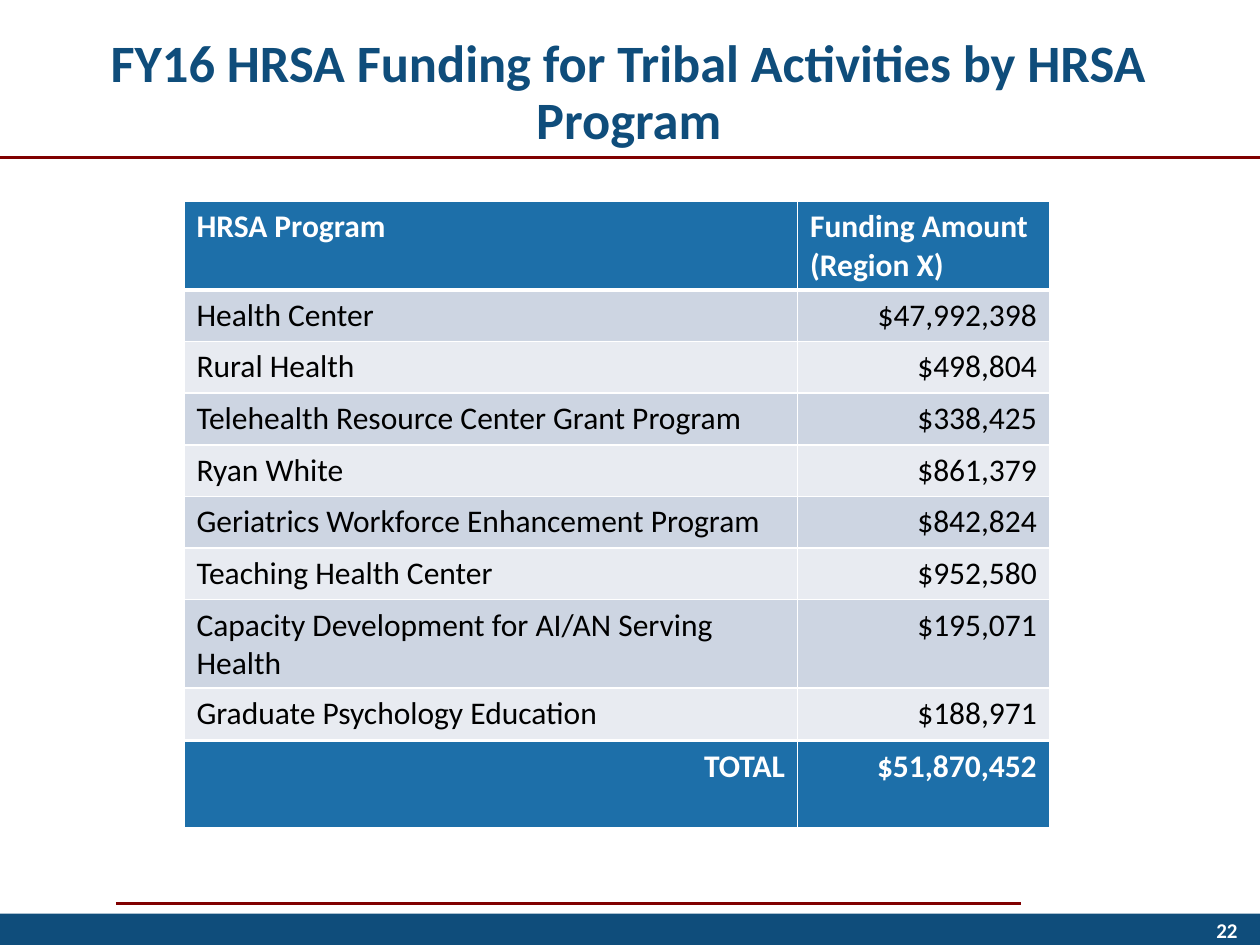
from lxml import etree
from pptx import Presentation
from pptx.dml.color import RGBColor
from pptx.enum.shapes import MSO_CONNECTOR, MSO_SHAPE
from pptx.enum.text import MSO_ANCHOR, PP_ALIGN
from pptx.oxml.ns import qn
from pptx.util import Inches, Pt

STRAIGHT = MSO_CONNECTOR.STRAIGHT
RECTANGLE = MSO_SHAPE.RECTANGLE
MIDDLE = MSO_ANCHOR.MIDDLE
LEFT, CENTER, RIGHT = PP_ALIGN.LEFT, PP_ALIGN.CENTER, PP_ALIGN.RIGHT

COLORS = {
    "navy": "0F4D7B",
    "maroon": "800000",
    "header": "1D6FA9",
    "odd": "CDD5E2",
    "even": "E8EBF1",
    "white": "FFFFFF",
    "black": "000000",
}


def write(frame, text, size, color, bold, align):
    paragraph = frame.paragraphs[0]
    paragraph.alignment = align
    run = paragraph.add_run()
    run.text = text
    run.font.name = "Calibri"
    run.font.size = Pt(size)
    run.font.bold = bold
    run.font.color.rgb = RGBColor.from_string(COLORS[color])
    return paragraph


def fill_cell(cell, text, fill, color, bold, align, bottom_width):
    write(cell.text_frame, text, 18, color, bold, align)
    properties = cell._tc.get_or_add_tcPr()
    for side, width in (("L", 1), ("R", 1), ("T", 1), ("B", bottom_width)):
        border = etree.SubElement(properties, qn(f"a:ln{side}"), w=str(Pt(width)))
        solid = etree.SubElement(border, qn("a:solidFill"))
        etree.SubElement(solid, qn("a:srgbClr"), val=COLORS["white"])
    cell.fill.solid()
    cell.fill.fore_color.rgb = RGBColor.from_string(COLORS[fill])


prs = Presentation()
prs.slide_width, prs.slide_height = Inches(10), Inches(7.5)
slide = prs.slides.add_slide(prs.slide_layouts[6])
shapes = slide.shapes

# Rules under the title and above the footer
for start, end, y, width in ((0.92, 8.1, 7.17, 1.5), (0, 10, 1.25, 2.25)):
    rule = shapes.add_connector(
        STRAIGHT, Inches(start), Inches(y), Inches(end), Inches(y))
    rule.line.color.rgb = RGBColor.from_string(COLORS["maroon"])
    rule.line.width = Pt(width)
    etree.SubElement(rule._element.spPr, qn("a:effectLst"))

# Footer band
footer = shapes.add_shape(
    RECTANGLE, Inches(0), Inches(7.25), Inches(10), Inches(0.25))
footer.shadow.inherit = False
footer.fill.solid()
footer.fill.fore_color.rgb = RGBColor.from_string(COLORS["navy"])
footer.line.fill.background()

# Title and page number
for left, top, width, height, text, size, color, align, spacing in (
    (0.2, 0.02, 9.58, 1.45, "FY16 HRSA Funding for Tribal Activities by HRSA Program",
     30, "navy", CENTER, 0.9),
    (7.67, 7.18, 2.25, 0.4, "22", 12, "white", RIGHT, 1.0),
):
    label = shapes.add_textbox(
        Inches(left), Inches(top), Inches(width), Inches(height)).text_frame
    label.word_wrap = True
    label.vertical_anchor = MIDDLE
    write(label, text, size, color, True, align).line_spacing = spacing

# Funding by program, then the total in a table of its own
funding = [
    ("HRSA Program", "Funding Amount (Region X)"),
    ("Health Center", "$47,992,398"),
    ("Rural Health", "$498,804"),
    ("Telehealth Resource Center Grant Program", "$338,425"),
    ("Ryan White", "$861,379"),
    ("Geriatrics Workforce Enhancement Program", "$842,824"),
    ("Teaching Health Center", "$952,580"),
    ("Capacity Development for AI/AN Serving Health", "$195,071"),
    ("Graduate Psychology Education", "$188,971"),
]
total = [("TOTAL", "$51,870,452")]

for top, row_height, rows in ((1.6, 0.41, funding), (5.88, 0.7, total)):
    table = shapes.add_table(
        len(rows), 2, Inches(1.46), Inches(top),
        Inches(6.87), Inches(row_height * len(rows))).table
    table.columns[0].width, table.columns[1].width = Inches(4.87), Inches(2)
    for r, row in enumerate(rows):
        table.rows[r].height = Inches(row_height)
        strong = r == 0
        fill = "header" if strong else ("odd" if r % 2 else "even")
        for c, text in enumerate(row):
            to_right = rows is total or (c == 1 and not strong)
            fill_cell(table.cell(r, c), text, fill,
                      "white" if strong else "black", strong,
                      RIGHT if to_right else LEFT, 3 if strong else 1)
            # The first body row shares the header's thick border
            if r == 1:
                table.cell(r, c)._tc.tcPr.find(qn("a:lnT")).set("w", str(Pt(3)))

prs.save("out.pptx")
